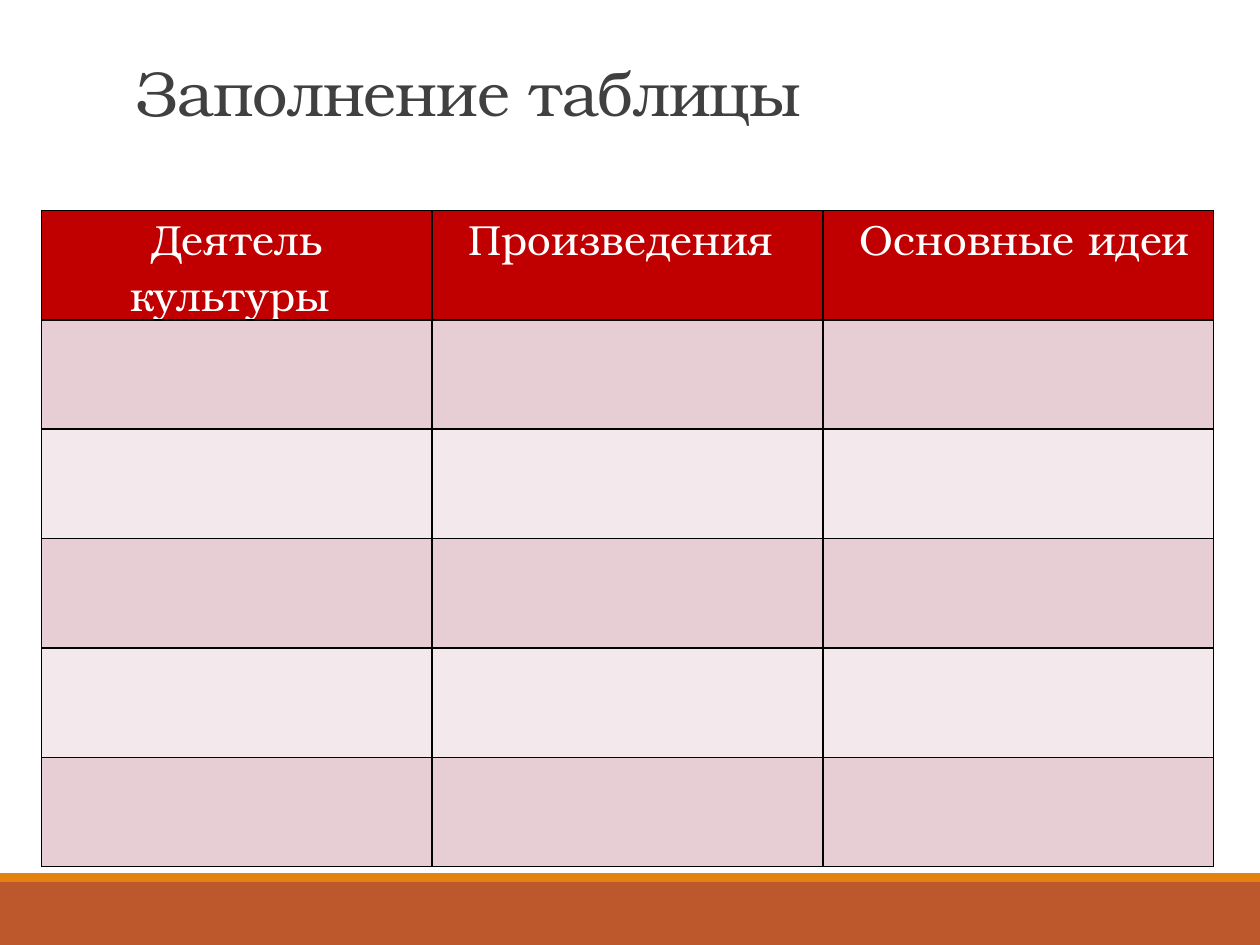
import pptx
import pptx.util
import pptx.dml.color
import pptx.enum.shapes
import pptx.enum.text
import pptx.oxml
import pptx.oxml.ns

Inches, Pt = pptx.util.Inches, pptx.util.Pt
ALIGN = pptx.enum.text.PP_ALIGN
FONT = "TeX Gyre Bonum"
COLORS = {
    "title": "404040", "head": "C00000", "label": "FFFFFF", "grid": "000000",
    "odd": "E6CED4", "even": "F3E8EB", "band": "BD582C", "strip": "E48312",
}
TITLE = "Заполнение таблицы"
HEADS = ["Деятель культуры ", "Произведения ", " Основные идеи"]
BANDS = [("band", 7, 0.5), ("strip", 6.93, 0.07)]
ROWS = 6
LEFT, TOP, WIDTH, HEIGHT = 0.33, 1.67, 9.3, 5.21


def paint(fill, name):
    fill.solid()
    fill.fore_color.rgb = pptx.dml.color.RGBColor.from_string(COLORS[name])


def write(par, text, size, name):
    run = par.add_run()
    run.text = text
    run.font.name = FONT
    run.font.size = Pt(size)
    paint(run.font.fill, name)
    return run


def frame(cell):
    props = cell._tc.get_or_add_tcPr()
    space = pptx.oxml.ns.nsdecls("a")
    for spot, side in enumerate(("lnL", "lnR", "lnT", "lnB")):
        props.insert(spot, pptx.oxml.parse_xml(
            f'<a:{side} {space} w="{Pt(1)}"><a:solidFill>'
            f'<a:srgbClr val="{COLORS["grid"]}"/></a:solidFill></a:{side}>'))


def add_bands(slide):
    for name, top, height in BANDS:
        bar = slide.shapes.add_shape(
            pptx.enum.shapes.MSO_SHAPE.RECTANGLE,
            Inches(0), Inches(top), Inches(10), Inches(height))
        bar.shadow.inherit = False
        paint(bar.fill, name)
        bar.line.fill.background()


def add_title(slide):
    box = slide.shapes.add_textbox(
        Inches(0.98), Inches(-0.42), Inches(8.11), Inches(1.5))
    text = box.text_frame
    text.word_wrap = True
    text.vertical_anchor = pptx.enum.text.MSO_ANCHOR.BOTTOM
    par = text.paragraphs[0]
    par.line_spacing = 0.85
    run = write(par, TITLE, 36, "title")
    run.font._element.set("spc", "-50")


def add_grid(slide):
    table = slide.shapes.add_table(
        ROWS, len(HEADS), Inches(LEFT), Inches(TOP),
        Inches(WIDTH), Inches(HEIGHT)).table
    for num, row in enumerate(table.rows):
        name = "head" if num == 0 else ("odd" if num % 2 else "even")
        for cell in row.cells:
            paint(cell.fill, name)
            frame(cell)
    for col, head in enumerate(HEADS):
        cell = table.cell(0, col)
        cell.margin_left = cell.margin_right = Inches(0.07)
        cell.margin_top = cell.margin_bottom = Inches(0)
        par = cell.text_frame.paragraphs[0]
        par.alignment = ALIGN.CENTER
        write(par, head, 24, "label")


def main():
    deck = pptx.Presentation()
    deck.slide_width, deck.slide_height = Inches(10), Inches(7.5)
    slide = deck.slides.add_slide(deck.slide_layouts[6])
    add_bands(slide)
    add_title(slide)
    add_grid(slide)
    deck.save("out.pptx")


if __name__ == "__main__":
    main()
